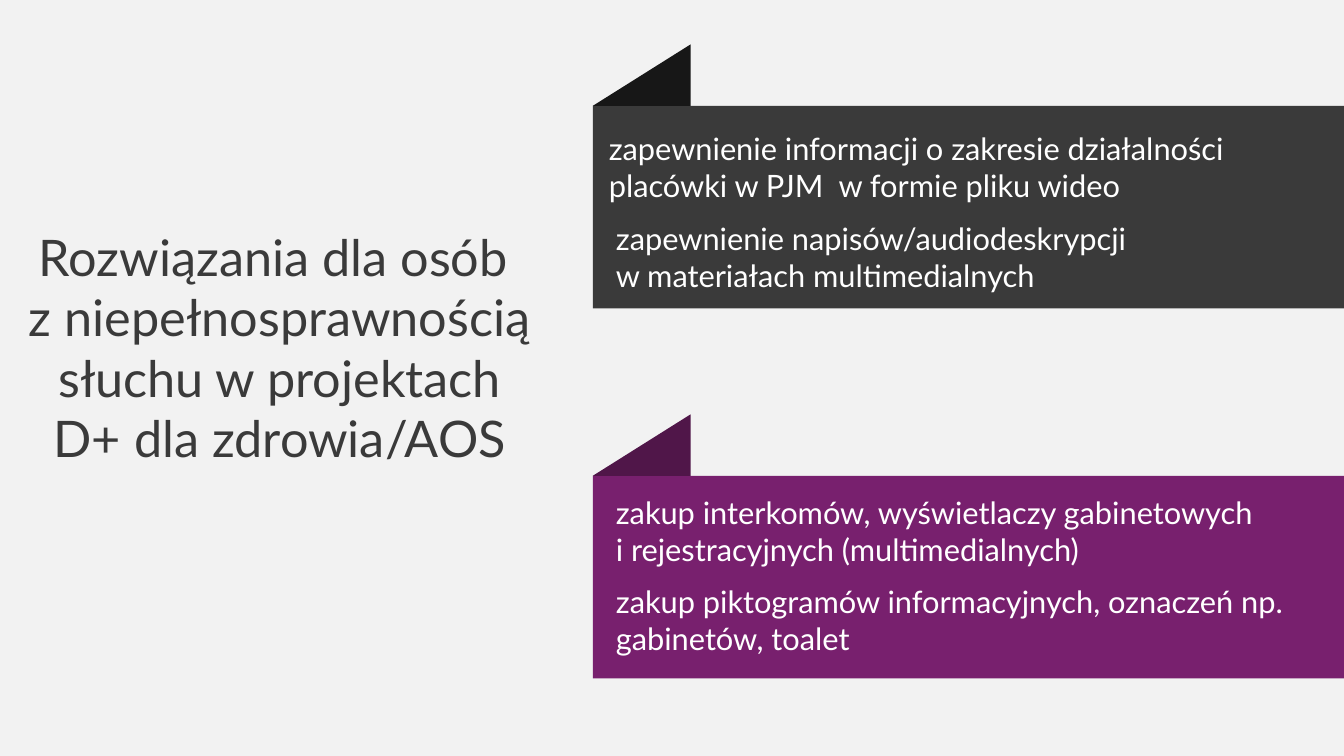
import pptx
import pptx.dml.color
import pptx.enum.shapes
import pptx.enum.text
import pptx.util

Inches = pptx.util.Inches
Shape = pptx.enum.shapes.MSO_SHAPE
Align = pptx.enum.text.PP_ALIGN

THEME = {
    "font": "Lato",
    "background": "F2F2F2",
    "dark": "3A3A3A",
    "dark_fold": "171717",
    "purple": "78206E",
    "purple_fold": "501649",
    "light": "FFFFFF",
    "title_size": 36,
    "body_size": 22,
}

# "\v" is a line break inside a paragraph
TITLE = "Rozwiązania dla osób \vz niepełnosprawnością słuchu w projektach D+ dla zdrowia/AOS"

# Each banner: top, fill, fold fill, solutions as (left, top, width, wording)
BANNERS = [
    (1.05, "dark", "dark_fold", [
        (5.94, 1.24, 7.46, "zapewnienie informacji o zakresie działalności placówki w PJM  w formie pliku wideo"),
        (6.01, 2.13, 7.18, "zapewnienie napisów/audiodeskrypcji \vw materiałach multimedialnych"),
    ]),
    (4.72, "purple", "purple_fold", [
        (6.01, 4.85, 6.74, "zakup interkomów, wyświetlaczy gabinetowych \vi rejestracyjnych (multimedialnych)"),
        (6.01, 5.73, 7.08, "zakup piktogramów informacyjnych, oznaczeń np. gabinetów, toalet"),
    ]),
]

SLIDE_W, SLIDE_H = 13.33, 7.5
BANNER_LEFT, BANNER_H = 5.88, 2.01
FOLD_W, FOLD_H = 0.97, 0.61
SOLUTION_H = 0.84


def color(key):
    return pptx.dml.color.RGBColor.from_string(THEME[key])


def add_filled(slide, preset, left, top, width, height, fill):
    shape = slide.shapes.add_shape(preset, Inches(left), Inches(top), Inches(width), Inches(height))
    shape.shadow.inherit = False
    shape.fill.solid()
    shape.fill.fore_color.rgb = color(fill)
    shape.line.fill.background()
    return shape


def add_fold(slide, left, bottom, fill):
    """Add the folded corner; its sides are swapped because it is turned by 270 degrees."""
    center_x, center_y = left + FOLD_W / 2, bottom - FOLD_H / 2
    fold = add_filled(slide, Shape.RIGHT_TRIANGLE, center_x - FOLD_H / 2, center_y - FOLD_W / 2,
                      FOLD_H, FOLD_W, fill)
    fold.rotation = 270


def add_text(slide, left, top, width, height, wording, size, ink, align=Align.LEFT):
    box = slide.shapes.add_textbox(Inches(left), Inches(top), Inches(width), Inches(height))
    box.text_frame.word_wrap = True
    paragraph = box.text_frame.paragraphs[0]
    paragraph.text = wording
    paragraph.alignment = align
    for run in paragraph.runs:
        run.font.name = THEME["font"]
        run.font.size = pptx.util.Pt(THEME[size])
        run.font.color.rgb = color(ink)


def main():
    deck = pptx.Presentation()
    deck.slide_width, deck.slide_height = Inches(SLIDE_W), Inches(SLIDE_H)
    slide = deck.slides.add_slide(deck.slide_layouts[6])
    slide.background.fill.solid()
    slide.background.fill.fore_color.rgb = color("background")

    add_text(slide, 0.16, 2.19, 5.23, 2.52, TITLE, "title_size", "dark", Align.CENTER)
    for banner_top, fill, fold_fill, solutions in BANNERS:
        add_filled(slide, Shape.RECTANGLE, BANNER_LEFT, banner_top,
                   SLIDE_W - BANNER_LEFT, BANNER_H, fill)
        add_fold(slide, BANNER_LEFT, banner_top, fold_fill)
        for left, top, width, wording in solutions:
            add_text(slide, left, top, width, SOLUTION_H, wording, "body_size", "light")

    deck.save("out.pptx")


if __name__ == "__main__":
    main()
